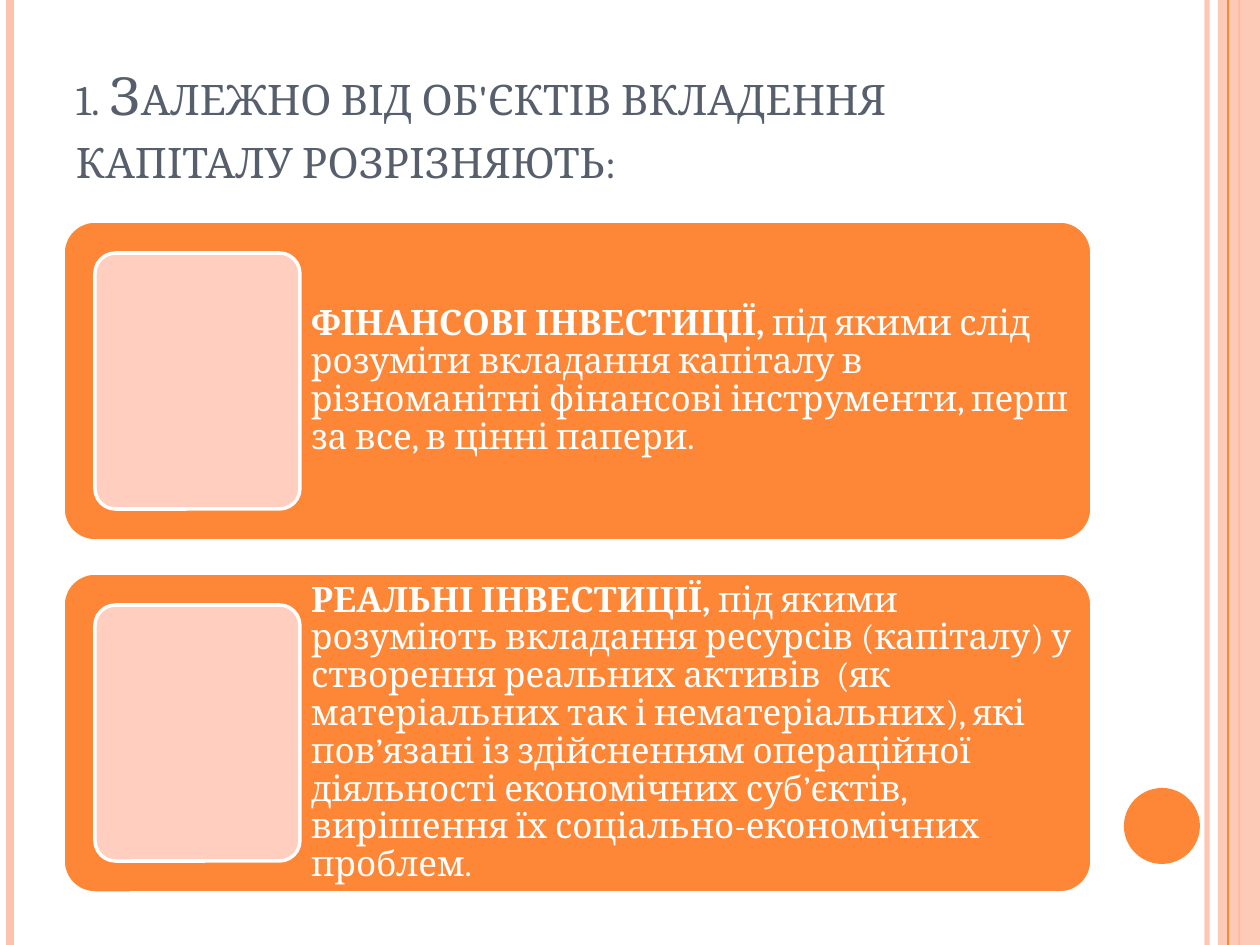
from lxml.etree import SubElement
from pptx import Presentation
from pptx.dml.color import RGBColor
from pptx.enum.shapes import MSO_CONNECTOR as Connector, MSO_SHAPE as Shape
from pptx.enum.text import MSO_ANCHOR as Anchor
from pptx.oxml.ns import qn
from pptx.util import Pt

PX = 914400 // 126
WIDTH, HEIGHT = 1260, 945
FONT = "Cambria"
COLORS = {
    "orange": "FE8637",
    "peach": "FEC3AE",
    "pale": "FFCEBF",
    "white": "FFFFFF",
    "slate": "575F6D",
}

TITLE = "1. Залежно від об'єктів вкладення капіталу розрізняють:"
CARDS = [
    ("ФІНАНСОВІ ІНВЕСТИЦІЇ, ",
     "під якими слід розуміти вкладання капіталу в різноманітні фінансові "
     "інструменти, перш за все, в цінні папери."),
    ("РЕАЛЬНІ ІНВЕСТИЦІЇ, ",
     "під якими розуміють вкладання ресурсів (капіталу) у створення реальних "
     "активів  (як матеріальних так і нематеріальних), які пов’язані із "
     "здійсненням операційної діяльності економічних суб’єктів, вирішення їх "
     "соціально-економічних проблем."),
]
BACK_STRIPES = [(1207, "peach", 3, 93), (10, "peach", 4.5, 100), (1239, "orange", 1.5, 100)]
FRONT_STRIPE = (1228, "orange", 0.75, 100)

CARD_LEFT, CARD_TOP, CARD_WIDTH, CARD_HEIGHT, CARD_GAP = 63, 221, 1029, 320, 32
PANEL_INSET, PANEL_WIDTH = 32, 205
TEXT_LEFT = CARD_LEFT + PANEL_INSET + PANEL_WIDTH + 1


def px(*lengths):
    return [length * PX for length in lengths]


def paint(color_format, name):
    color_format.rgb = RGBColor.from_string(COLORS[name])


def set_opacity(fill, percent):
    if percent < 100:
        color = fill._xPr.find(qn("a:solidFill"))[0]
        SubElement(color, qn("a:alpha"), val=str(percent * 1000))


def add_stripe(slide, x, color, weight, opacity):
    line = slide.shapes.add_connector(Connector.STRAIGHT, *px(x, 0, x, HEIGHT))
    line.line.width = Pt(weight)
    paint(line.line.fill.fore_color if line.line.fill.type else line.line.color, color)
    set_opacity(line.line.fill, opacity)
    SubElement(line._element.spPr, qn("a:effectLst"))


def add_block(slide, kind, box, color, outline=None, opacity=100):
    shape = slide.shapes.add_shape(kind, *px(*box))
    shape.shadow.inherit = False
    shape.fill.solid()
    paint(shape.fill.fore_color, color)
    set_opacity(shape.fill, opacity)
    if kind == Shape.ROUNDED_RECTANGLE:
        shape.adjustments[0] = 0.1
    if outline:
        paint(shape.line.color, outline)
        shape.line.width = Pt(2)
    else:
        shape.line.fill.background()


def add_text(slide, box, anchor, margins):
    frame = slide.shapes.add_textbox(*px(*box)).text_frame
    frame.word_wrap = True
    frame.vertical_anchor = anchor
    frame.margin_left, frame.margin_top, frame.margin_right, frame.margin_bottom = px(*margins)
    return frame.paragraphs[0]


def add_run(paragraph, text, size, color, bold=False):
    run = paragraph.add_run()
    run.text = text
    run.font.name = FONT
    run.font.size = Pt(size)
    run.font.bold = bold
    paint(run.font.color, color)
    return run


def add_card(slide, top, heading, body):
    add_block(slide, Shape.ROUNDED_RECTANGLE,
              (CARD_LEFT, top, CARD_WIDTH, CARD_HEIGHT), "orange", "white")
    text_width = CARD_LEFT + CARD_WIDTH - TEXT_LEFT
    paragraph = add_text(slide, (TEXT_LEFT, top, text_width, CARD_HEIGHT),
                         Anchor.MIDDLE, (10, 10, 10, 10))
    paragraph.line_spacing = 0.9
    add_run(paragraph, heading, 20, "white", bold=True)
    add_run(paragraph, body, 20, "white")
    add_block(slide, Shape.ROUNDED_RECTANGLE,
              (CARD_LEFT + PANEL_INSET, top + PANEL_INSET,
               PANEL_WIDTH, CARD_HEIGHT - 2 * PANEL_INSET), "pale", "white")


def main():
    presentation = Presentation()
    presentation.slide_width, presentation.slide_height = px(WIDTH, HEIGHT)
    slide = presentation.slides.add_slide(presentation.slide_layouts[6])

    for stripe in BACK_STRIPES:
        add_stripe(slide, *stripe)
    add_block(slide, Shape.RECTANGLE, (1218, 0, 42, HEIGHT), "peach", opacity=87)
    add_stripe(slide, *FRONT_STRIPE)
    add_block(slide, Shape.OVAL, (1124, 788, 76, 76), "orange")

    title = add_text(slide, (63, 38, 1029, 157), Anchor.BOTTOM, (13, 6, 13, 6))
    run = add_run(title, TITLE, 30, "slate")
    run.font._element.set("cap", "small")

    for index, (heading, body) in enumerate(CARDS):
        add_card(slide, CARD_TOP + index * (CARD_HEIGHT + CARD_GAP), heading, body)

    presentation.save("out.pptx")


if __name__ == "__main__":
    main()
